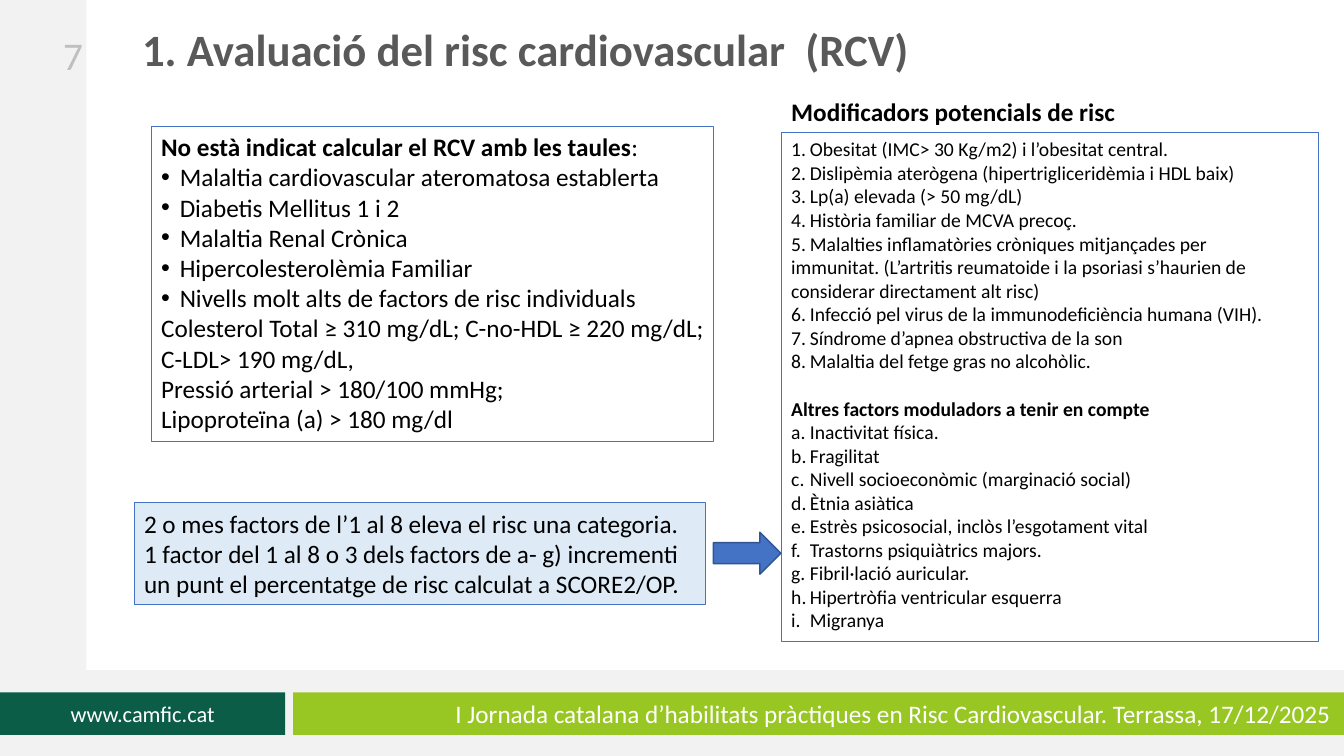
from dataclasses import dataclass

from lxml import etree
from pptx import Presentation
from pptx.dml.color import RGBColor
from pptx.enum.shapes import MSO_SHAPE
from pptx.enum.text import MSO_ANCHOR, MSO_AUTO_SIZE, PP_ALIGN
from pptx.oxml.ns import qn
from pptx.util import Cm, Pt

RECTANGLE, ARROW = MSO_SHAPE.RECTANGLE, MSO_SHAPE.RIGHT_ARROW
TOP, MIDDLE = MSO_ANCHOR.TOP, MSO_ANCHOR.MIDDLE
LEFT, CENTER, RIGHT = PP_ALIGN.LEFT, PP_ALIGN.CENTER, PP_ALIGN.RIGHT
NO_AUTOFIT = MSO_AUTO_SIZE.NONE

FONT = "Calibri"
HANGING = Cm(0.47)
COLORS = {
    "black": "000000", "white": "FFFFFF", "title": "595959", "number": "BFBFBF",
    "band": "F2F2F2", "dark_green": "0B5D48", "green": "98C723",
    "blue": "4472C4", "dark_blue": "325491", "pale_blue": "DEEBF7",
}


@dataclass
class Box:
    left: float
    top: float
    width: float
    height: float
    fill: str = ""
    line: str = ""
    line_width: float = 0.75


@dataclass
class Line:
    text: str
    marker: str = ""  # "bullet" or a numbering scheme
    start: int = 1
    bold: bool = False
    before: float = 0
    plain_tail: str = ""


@dataclass
class TextStyle:
    size: float
    color: str = "black"
    align: PP_ALIGN = LEFT
    anchor: MSO_ANCHOR = TOP
    spacing: float = 1.0
    right_inset: float = 0.25


def numbered(scheme: str, texts: list[str], start: int = 1) -> list[Line]:
    return [Line(text, scheme, start) for text in texts]


# Text content
NOT_INDICATED = [
    Line("No està indicat calcular el RCV amb les taules", bold=True, plain_tail=":"),
    *numbered("bullet", [
        "Malaltia cardiovascular ateromatosa establerta",
        "Diabetis Mellitus 1 i 2",
        "Malaltia Renal Crònica",
        "Hipercolesterolèmia Familiar",
        "Nivells molt alts de factors de risc individuals",
    ]),
    Line("Colesterol Total ≥ 310 mg/dL; C-no-HDL ≥ 220 mg/dL; C-LDL> 190 mg/dL,"),
    Line("Pressió arterial > 180/100 mmHg;"),
    Line("Lipoproteïna (a) > 180 mg/dl"),
]
MODIFIERS = [
    *numbered("arabicPeriod", [
        "Obesitat (IMC> 30 Kg/m2) i l’obesitat central.",
        "Dislipèmia aterògena (hipertrigliceridèmia i HDL baix)",
        "Lp(a) elevada (> 50 mg/dL)",
        "Història familiar de MCVA precoç.",
        "Malalties inflamatòries cròniques mitjançades per",
    ]),
    Line("immunitat. (L’artritis reumatoide i la psoriasi s’haurien de"),
    Line("considerar directament alt risc)"),
    *numbered("arabicPeriod", [
        "Infecció pel virus de la immunodeficiència humana (VIH).",
        "Síndrome d’apnea obstructiva de la son",
        "Malaltia del fetge gras no alcohòlic.",
    ], start=6),
    Line("Altres factors moduladors a tenir en compte", bold=True, before=17),
    *numbered("alphaLcPeriod", [
        "Inactivitat física.",
        "Fragilitat",
        "Nivell socioeconòmic (marginació social)",
        "Ètnia asiàtica",
        "Estrès psicosocial, inclòs l’esgotament vital",
        "Trastorns psiquiàtrics majors.",
        "Fibril·lació auricular.",
        "Hipertròfia ventricular esquerra",
        "Migranya",
    ]),
]
RULE = [
    Line("2 o mes factors de l’1 al 8 eleva el risc una categoria."),
    Line("1 factor del 1 al 8 o 3 dels factors de a- g) incrementi"),
    Line("un punt el percentatge de risc calculat a SCORE2/OP."),
]


def rgb(name: str) -> RGBColor:
    return RGBColor.from_string(COLORS[name])


def set_all(target, values: dict) -> None:
    for name, value in values.items():
        setattr(target, name, value)


def format_box(shape, box: Box) -> None:
    set_all(shape, {"left": Cm(box.left), "top": Cm(box.top),
                    "width": Cm(box.width), "height": Cm(box.height)})
    if box.fill:
        shape.fill.solid()
        shape.fill.fore_color.rgb = rgb(box.fill)
    else:
        shape.fill.background()
    if box.line:
        shape.line.color.rgb = rgb(box.line)
        shape.line.width = Pt(box.line_width)
    else:
        shape.line.fill.background()


def set_marker(paragraph, line: Line) -> None:
    properties = paragraph._p.get_or_add_pPr()
    indent = HANGING if line.marker else 0
    properties.set("marL", str(indent))
    properties.set("indent", str(-indent))
    if line.marker == "bullet":
        etree.SubElement(properties, qn("a:buChar"), char="•")
    elif line.marker:
        etree.SubElement(properties, qn("a:buAutoNum"), type=line.marker,
                         startAt=str(line.start))
    else:
        etree.SubElement(properties, qn("a:buNone"))


def write(shape, lines: list[Line], style: TextStyle) -> None:
    frame = shape.text_frame
    set_all(frame, {"word_wrap": True, "auto_size": NO_AUTOFIT,
                    "vertical_anchor": style.anchor,
                    "margin_left": Cm(0.25), "margin_right": Cm(style.right_inset),
                    "margin_top": Cm(0.13), "margin_bottom": Cm(0.13)})
    for index, line in enumerate(lines):
        paragraph = frame.add_paragraph() if index else frame.paragraphs[0]
        set_marker(paragraph, line)
        set_all(paragraph, {"alignment": style.align, "line_spacing": style.spacing,
                            "space_before": Pt(line.before), "space_after": Pt(0)})
        for text, bold in ((line.text, line.bold), (line.plain_tail, False)):
            if text:
                run = paragraph.add_run()
                run.text = text
                set_all(run.font, {"name": FONT, "size": Pt(style.size), "bold": bold})
                run.font.color.rgb = rgb(style.color)


def add_box(slide, box: Box, preset: MSO_SHAPE = RECTANGLE):
    shape = slide.shapes.add_shape(preset, 0, 0, 0, 0)
    shape.shadow.inherit = False
    format_box(shape, box)
    return shape


def add_label(slide, box: Box, text: str, style: TextStyle, bold: bool = False) -> None:
    label = slide.shapes.add_textbox(0, 0, 0, 0)
    format_box(label, box)
    write(label, [Line(text, bold=bold)], style)


def main() -> None:
    presentation = Presentation()
    set_all(presentation, {"slide_width": Cm(33.87), "slide_height": Cm(19.05)})
    slide = presentation.slides.add_slide(presentation.slide_layouts[3])
    title, left_list, right_list = slide.placeholders

    # Side and bottom bands, footer bars
    add_box(slide, Box(0, 0, 2.18, 19.05, "band"))
    add_box(slide, Box(0, 16.89, 33.87, 2.16, "band"))
    website = add_box(slide, Box(0, 17.45, 7.19, 1.07, "dark_green"))
    write(website, [Line("www.camfic.cat")], TextStyle(16, "white", CENTER, MIDDLE))
    event = add_box(slide, Box(7.39, 17.45, 26.48, 1.07, "green"))
    write(event, [Line("I Jornada catalana d’habilitats pràctiques en Risc "
                       "Cardiovascular. Terrassa, 17/12/2025")],
          TextStyle(18, "white", RIGHT, MIDDLE, right_inset=0.33))
    add_label(slide, Box(0, 0.43, 2.34, 1.9), "7", TextStyle(28, "number", RIGHT, MIDDLE))

    # Title and the two lists
    format_box(title, Box(3.33, 0.58, 20.32, 1.22))
    write(title, [Line("1. Avaluació del risc cardiovascular  (RCV)", bold=True)],
          TextStyle(32, "title", spacing=0.9))
    format_box(left_list, Box(3.81, 3.18, 14.17, 7.95, line="blue"))
    write(left_list, NOT_INDICATED, TextStyle(18, right_inset=0.15))
    add_label(slide, Box(19.69, 2.29, 12.9, 1.02), "Modificadors potencials de risc",
              TextStyle(18), bold=True)
    format_box(right_list, Box(19.69, 3.33, 13.54, 12.83, line="blue"))
    write(right_list, MODIFIERS, TextStyle(14))

    # Rule callout and arrow
    add_box(slide, Box(17.98, 13.41, 1.7, 1.06, "blue", "dark_blue", 1), ARROW)
    rule = add_box(slide, Box(3.38, 12.67, 14.4, 2.57, "pale_blue", "blue"))
    write(rule, RULE, TextStyle(18))

    presentation.save("out.pptx")


if __name__ == "__main__":
    main()
